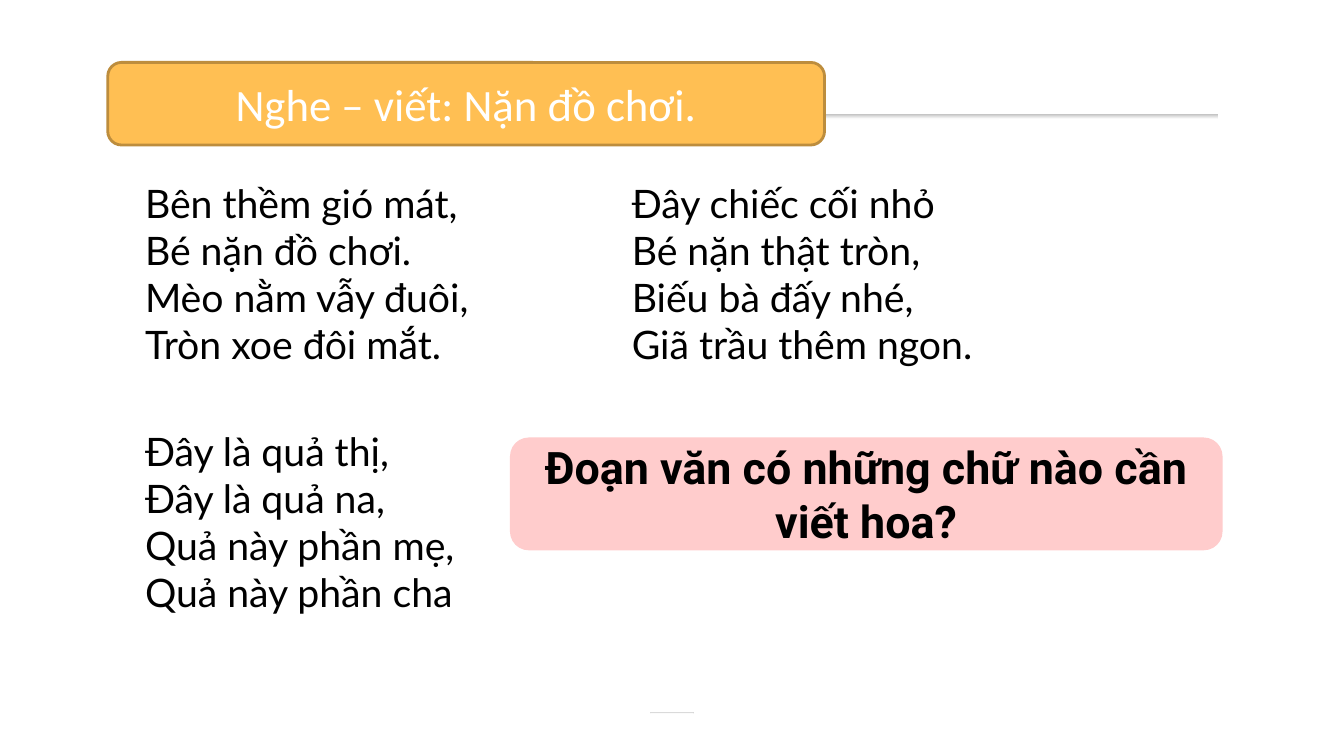
"""Build a dictation slide with a poem and a question about capital letters."""
from pptx import Presentation
from pptx.dml.color import RGBColor
from pptx.enum.shapes import MSO_SHAPE
from pptx.enum.text import MSO_ANCHOR, PP_ALIGN
from pptx.util import Pt

COLOURS = {
    "rule": "BFBFBF",
    "white": "FFFFFF",
    "black": "000000",
    "title": "FFBF53",
    "title_edge": "BD8D3D",
    "question": "FFCCCC",
}
LEFT, RIGHT = 96.5, 444.2
UPPER, LOWER = 124.6, 301.7
STANZAS = [
    (LEFT, UPPER, ["Bên thềm gió mát,", "Bé nặn đồ chơi.",
                   "Mèo nằm vẫy đuôi,", "Tròn xoe đôi mắt."]),
    (LEFT, LOWER, ["Đây là quả thị,", "Đây là quả na,",
                   "Quả này phần mẹ,", "Quả này phần cha"]),
    (RIGHT, UPPER, ["Đây chiếc cối nhỏ", "Bé nặn thật tròn,",
                    "Biếu bà đấy nhé,", "Giã trầu thêm ngon."]),
]


def colour(name):
    return RGBColor.from_string(COLOURS[name])


def add_span(para, text, font, size, ink, bold=False):
    span = para.add_run()
    span.text = text
    span.font.name = font
    span.font.size = Pt(size)
    span.font.bold = bold
    span.font.color.rgb = colour(ink)


def add_rounded(page, left, top, width, height):
    box = page.shapes.add_shape(MSO_SHAPE.ROUNDED_RECTANGLE, Pt(left), Pt(top),
                                Pt(width), Pt(height))
    box.shadow.inherit = False
    box.line.fill.background()
    return box


def add_rule(page, left, top, width, height):
    rule = add_rounded(page, left, top, width, height)
    rule.adjustments[0] = 0.5
    rule.fill.gradient()
    rule.fill.gradient_angle = 270
    for stop, name, position in zip(rule.fill.gradient_stops, ("rule", "white"), (0, 1)):
        stop.color.rgb = colour(name)
        stop.position = position


def add_banner(page, place, fill, text, font, ink, bold=False, edge=None):
    box = add_rounded(page, *place)
    box.fill.solid()
    box.fill.fore_color.rgb = colour(fill)
    if edge:
        box.line.color.rgb = colour(edge)
        box.line.width = Pt(2)
    frame = box.text_frame
    frame.word_wrap = True
    frame.vertical_anchor = MSO_ANCHOR.MIDDLE
    para = frame.paragraphs[0]
    para.alignment = PP_ALIGN.CENTER
    add_span(para, text, font, 32, ink, bold)


def add_stanza(page, left, top, verses):
    box = page.shapes.add_textbox(Pt(left), Pt(top), Pt(314), Pt(143.3))
    box.text_frame.word_wrap = True
    para = box.text_frame.paragraphs[0]
    for index, verse in enumerate(verses):
        if index:
            para.add_line_break()
        add_span(para, verse, "Lato", 28, "black")


def main():
    deck = Presentation()
    deck.slide_width, deck.slide_height = Pt(960), Pt(540)
    page = deck.slides.add_slide(deck.slide_layouts[6])
    add_rule(page, 90, 81.4, 780.5, 3.6)
    add_rule(page, 464.4, 508.3, 31, 1.44)
    add_banner(page, (77, 44.6, 512, 59), "title", "Nghe – viết: Nặn đồ chơi.",
               "Calibri", "white", edge="title_edge")
    for left, top, verses in STANZAS:
        add_stanza(page, left, top, verses)
    add_banner(page, (364.3, 312.5, 509, 80.6), "question",
               "Đoạn văn có những chữ nào cần viết hoa?", "Roboto", "black", bold=True)
    deck.save("out.pptx")


if __name__ == "__main__":
    main()
